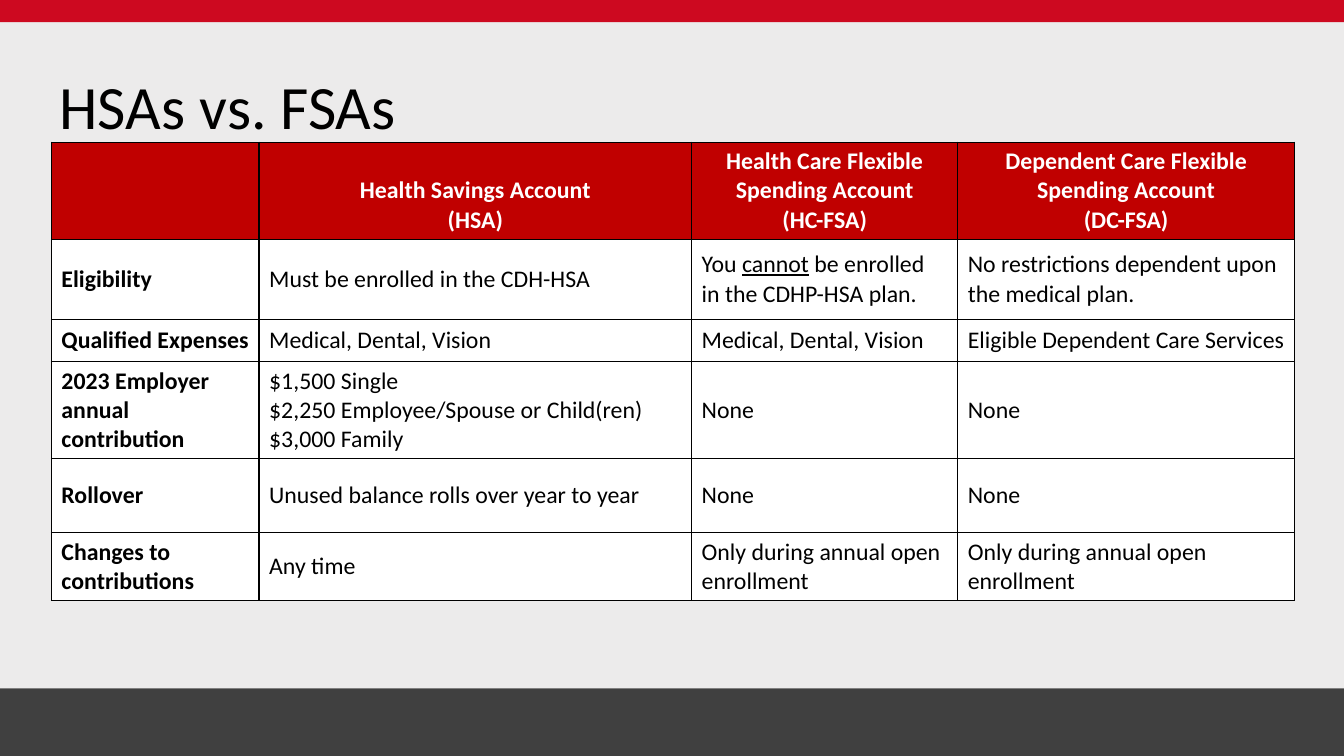
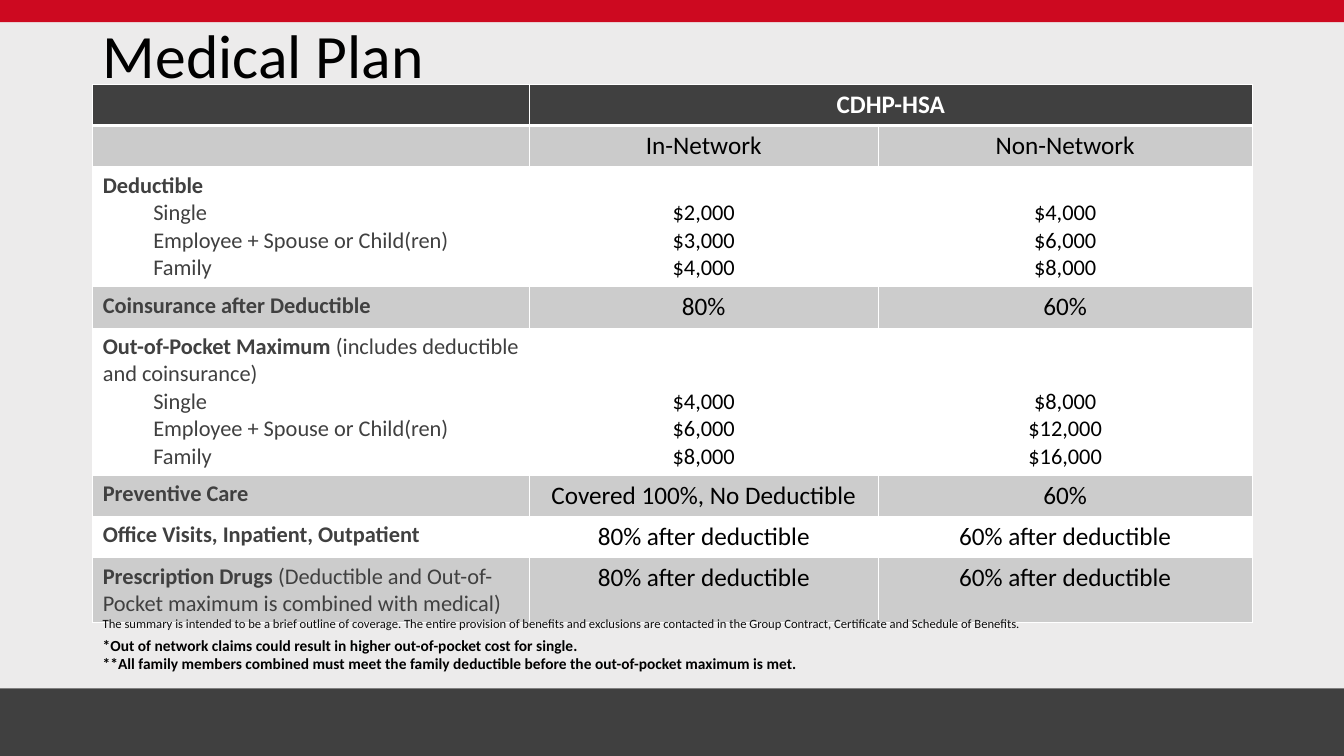
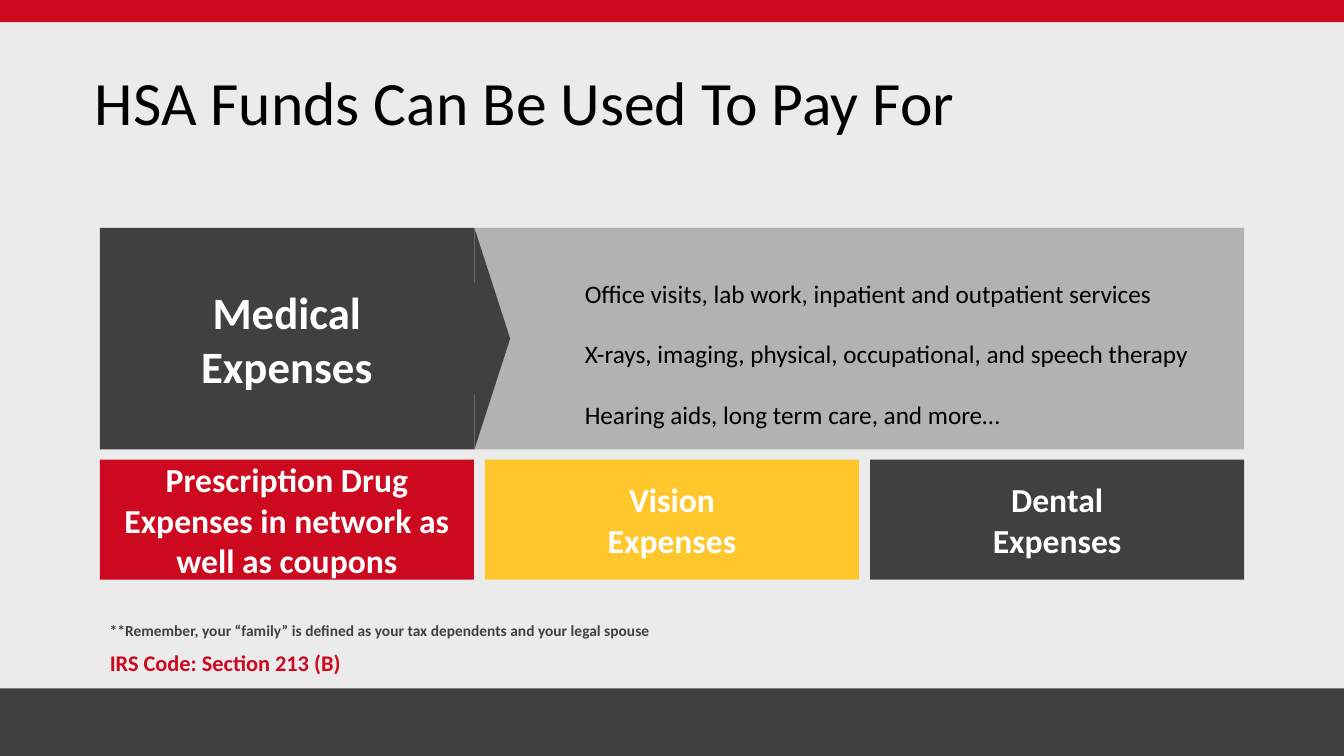
from dataclasses import dataclass
from typing import NamedTuple

from lxml import etree
from pptx import Presentation
from pptx.dml.color import RGBColor
from pptx.enum.shapes import MSO_SHAPE
from pptx.enum.text import MSO_ANCHOR, MSO_AUTO_SIZE, PP_ALIGN
from pptx.oxml import parse_xml
from pptx.oxml.ns import nsdecls, qn
from pptx.util import Inches, Pt

RECTANGLE, RIGHT_ARROW = MSO_SHAPE.RECTANGLE, MSO_SHAPE.RIGHT_ARROW
TOP, MIDDLE, BOTTOM = MSO_ANCHOR.TOP, MSO_ANCHOR.MIDDLE, MSO_ANCHOR.BOTTOM
LEFT, CENTER = PP_ALIGN.LEFT, PP_ALIGN.CENTER
NO_FIT = MSO_AUTO_SIZE.NONE
TITLE_ONLY = 5


@dataclass(frozen=True)
class Theme:
    """Colours, font and type sizes of the deck."""

    font: str = "Calibri"
    black: str = "000000"
    ink: str = "0D0D0D"
    white: str = "FFFFFF"
    dark: str = "404040"
    red: str = "CD0920"
    header_red: str = "C00000"
    yellow: str = "FFC72C"
    page: str = "D0CECE"
    subheader: str = "CBCBCB"
    stripe: str = "CCCCCC"
    title: float = 44
    hero: float = 32
    card: float = 24
    body: float = 18
    comparison: float = 17
    label: float = 16
    note: float = 11
    fine: float = 9


class Box(NamedTuple):
    """A rectangle in inches."""

    left: float
    top: float
    width: float
    height: float

    def lengths(self):
        """Return the four sides as slide lengths."""
        return [Inches(side) for side in self]


THEME = Theme()
SLIDE = Box(0, 0, 13.33, 7.5)
BANDS = (
    (Box(0, 0, 13.33, 6.83), THEME.page, 40),
    (Box(0, 6.83, 13.33, 0.67), THEME.dark, 100),
    (Box(0, 0, 13.33, 0.22), THEME.red, 100),
)
TIERS = ("Single", "Employee + Spouse or Child(ren)", "Family")

ACCOUNT_COLUMNS = (2.06, 4.29, 2.64, 3.34)
ACCOUNT_ROWS = (0.96, 0.79, 0.42, 0.96, 0.73, 0.67)
ACCOUNT_HEADERS = (
    (),
    ("Health Savings Account", "(HSA)"),
    ("Health Care Flexible Spending Account", "(HC-FSA)"),
    ("Dependent Care Flexible Spending Account", "(DC-FSA)"),
)
ACCOUNTS = (
    (
        ("Eligibility",),
        ("Must be enrolled in the CDH-HSA",),
        (("You ", ("cannot", {"underline": True}), " be enrolled in the CDHP-HSA plan."),),
        ("No restrictions dependent upon the medical plan.",),
    ),
    (
        ("Qualified Expenses",),
        ("Medical, Dental, Vision",),
        ("Medical, Dental, Vision",),
        ("Eligible Dependent Care Services",),
    ),
    (
        ("2023 Employer annual contribution",),
        ("$1,500 Single", "$2,250 Employee/Spouse or Child(ren)", "$3,000 Family"),
        ("None",),
        ("None",),
    ),
    (
        ("Rollover",),
        ("Unused balance rolls over year to year",),
        ("None",),
        ("None",),
    ),
    (
        ("Changes to contributions",),
        ("Any time",),
        ("Only during annual open enrollment",),
        ("Only during annual open enrollment",),
    ),
)

PLAN_COLUMNS = (4.33, 3.46, 3.71)
PLAN_ROWS = (0.4, 0.41, 1.19, 0.41, 1.46, 0.41, 0.41, 0.64)
PLAN = (
    ("Deductible", "", ("$2,000", "$3,000", "$4,000"), ("$4,000", "$6,000", "$8,000")),
    ("Coinsurance after Deductible", "", ("80%",), ("60%",)),
    (
        "Out-of-Pocket Maximum",
        " (includes deductible and coinsurance)",
        ("$4,000", "$6,000", "$8,000"),
        ("$8,000", "$12,000", "$16,000"),
    ),
    ("Preventive Care", "", ("Covered 100%, No Deductible",), ("60%",)),
    (
        "Office Visits, Inpatient, Outpatient",
        "",
        ("80% after deductible",),
        ("60% after deductible",),
    ),
    (
        "Prescription Drugs",
        " (Deductible and Out-of-Pocket maximum is combined with medical)",
        ("80% after deductible",),
        ("60% after deductible",),
    ),
)

CARDS = (
    (("Prescription Drug Expenses in network as well as coupons",), THEME.red),
    (("Vision", "Expenses"), THEME.yellow),
    (("Dental", "Expenses"), THEME.dark),
)
SERVICES = (
    "Office visits, lab work, inpatient and outpatient services",
    "X-rays, imaging, physical, occupational, and speech therapy",
    "Hearing aids, long term care, and more…",
)


def look(size, color=THEME.black, bold=False):
    """Return the format values of a text style."""
    return {"name": THEME.font, "size": Pt(size), "bold": bold, "color": color}


def set_font(font, formats):
    """Apply format values to a font."""
    for name, value in formats.items():
        if name == "color":
            font.color.rgb = RGBColor.from_string(value)
        else:
            setattr(font, name, value)


def write_text(frame, lines, formats, align=LEFT, indent=0, spacing=None):
    """Append one paragraph per line, each a string or a row of spans."""
    for line in lines:
        para = frame.add_paragraph() if frame.text else frame.paragraphs[0]
        para.alignment = align
        if indent:
            para.level = 1
            properties = para._p.get_or_add_pPr()
            properties.set("marL", str(Inches(indent)))
            properties.set("indent", "0")
        if spacing:
            para.line_spacing = spacing
        for part in (line,) if isinstance(line, str) else line:
            text, changes = (part, {}) if isinstance(part, str) else part
            span = para.add_run()
            span.text = text
            set_font(span.font, {**formats, **changes})


def add_block(slide, box, fill, opacity=100, kind=RECTANGLE):
    """Add a flat shape without outline."""
    block = slide.shapes.add_shape(kind, *box.lengths())
    block.shadow.inherit = False
    block.fill.solid()
    block.fill.fore_color.rgb = RGBColor.from_string(fill)
    block.line.fill.background()
    if opacity < 100:
        color = block.element.spPr.find(".//" + qn("a:srgbClr"))
        etree.SubElement(color, qn("a:alpha"), val=str(opacity * 1000))
    return block


def add_panel(slide, box, fill, lines, size):
    """Add a filled block with centred bold white text."""
    panel = add_block(slide, box, fill)
    frame = panel.text_frame
    frame.word_wrap = True
    frame.vertical_anchor = MIDDLE
    write_text(frame, lines, look(size, THEME.white, True), CENTER)


def add_note(slide, box, lines, formats):
    """Add a wrapped text box."""
    note = slide.shapes.add_textbox(*box.lengths())
    note.text_frame.word_wrap = True
    write_text(note.text_frame, lines, formats)


def add_page(deck, title, box):
    """Add a slide with its title placed in the box."""
    slide = deck.slides.add_slide(deck.slide_layouts[TITLE_ONLY])
    heading = slide.shapes.title
    heading.left, heading.top, heading.width, heading.height = box.lengths()
    frame = heading.text_frame
    frame.word_wrap = True
    frame.auto_size = NO_FIT
    frame.vertical_anchor = MIDDLE
    write_text(frame, [title], look(THEME.title), spacing=0.9)
    return slide


def add_bands(slide):
    """Place the shared bands on the layout of the slide."""
    anchor = slide.slide_layout.placeholders[0].element
    for box, fill, opacity in BANDS:
        anchor.addprevious(add_block(slide, box, fill, opacity).element)


def add_grid(slide, box, columns, rows):
    """Add an unbanded table with the given column widths and row heights."""
    frame = slide.shapes.add_table(len(rows), len(columns), *box.lengths())
    table = frame.table
    table.horz_banding = False
    for column, width in zip(table.columns, columns):
        column.width = Inches(width)
    for row, height in zip(table.rows, rows):
        row.height = Inches(height)
    return table


def style_cell(cell, fill, border, anchor=TOP, top=1, bottom=1):
    """Fill a cell and draw its four borders."""
    cell.fill.solid()
    cell.fill.fore_color.rgb = RGBColor.from_string(fill)
    cell.vertical_anchor = anchor
    widths = {"lnL": 1, "lnR": 1, "lnT": top, "lnB": bottom}
    for index, (side, width) in enumerate(widths.items()):
        line = parse_xml(
            f'<a:{side} {nsdecls("a")} w="{Pt(width)}"><a:solidFill>'
            f'<a:srgbClr val="{border}"/></a:solidFill></a:{side}>'
        )
        cell._tc.get_or_add_tcPr().insert(index, line)


def add_account_table(slide, box):
    """Add the comparison of savings and spending accounts."""
    table = add_grid(slide, box, ACCOUNT_COLUMNS, ACCOUNT_ROWS)
    header = look(THEME.comparison, THEME.white, True)
    for column, lines in enumerate(ACCOUNT_HEADERS):
        cell = table.cell(0, column)
        style_cell(cell, THEME.header_red, THEME.black, BOTTOM)
        write_text(cell.text_frame, lines, header, CENTER)
    for row, entries in enumerate(ACCOUNTS, 1):
        for column, lines in enumerate(entries):
            cell = table.cell(row, column)
            style_cell(cell, THEME.white, THEME.black, MIDDLE)
            write_text(cell.text_frame, lines, look(THEME.comparison, bold=column == 0))


def add_plan_table(slide, box):
    """Add the table of medical plan benefits."""
    table = add_grid(slide, box, PLAN_COLUMNS, PLAN_ROWS)
    table.cell(0, 1).merge(table.cell(0, 2))
    for column, network in enumerate(("", "In-Network", "Non-Network")):
        style_cell(table.cell(0, column), THEME.dark, THEME.white, bottom=3)
        cell = table.cell(1, column)
        style_cell(cell, THEME.subheader, THEME.white, top=3)
        if network:
            write_text(cell.text_frame, [network], look(THEME.body), CENTER)
    header = look(THEME.body, THEME.white, True)
    write_text(table.cell(0, 1).text_frame, ["CDHP-HSA"], header, CENTER)

    plain = look(THEME.label, THEME.dark)
    for row, (name, remark, *amounts) in enumerate(PLAN, 2):
        fill = THEME.stripe if row % 2 else THEME.white
        tiered = len(amounts[0]) > 1
        label = table.cell(row, 0)
        style_cell(label, fill, THEME.white)
        spans = [(name, {"bold": True})] + ([remark] if remark else [])
        write_text(label.text_frame, [spans], plain)
        if tiered:
            write_text(label.text_frame, TIERS, plain, indent=0.5)
        for column, lines in enumerate(amounts, 1):
            cell = table.cell(row, column)
            style_cell(cell, fill, THEME.white, BOTTOM if tiered else TOP)
            size = THEME.label if tiered else THEME.body
            write_text(cell.text_frame, lines, look(size), CENTER)


def add_medical_banner(slide, box, label_width):
    """Add the medical expenses label pointing to its services."""
    label = box._replace(width=label_width)
    edge = box.left + label_width
    services = box._replace(left=edge, width=box.width - label_width)
    details = add_block(slide, services, THEME.dark, 33)
    frame = details.text_frame
    frame.word_wrap = True
    frame.margin_left = Inches(1.1)
    frame.vertical_anchor = MIDDLE
    write_text(frame, SERVICES, look(THEME.body), spacing=2.0)
    pointer = box._replace(left=edge - 0.42, width=0.78)
    arrow = add_block(slide, pointer, THEME.dark, kind=RIGHT_ARROW)
    arrow.adjustments[0], arrow.adjustments[1] = 0.5, 0.455
    add_panel(slide, label, THEME.dark, ("Medical", "Expenses"), THEME.hero)


def add_expense_cards(slide, box, width):
    """Spread the expense cards evenly over the box."""
    step = (box.width - width) / (len(CARDS) - 1)
    for index, (lines, fill) in enumerate(CARDS):
        card = box._replace(left=box.left + index * step, width=width)
        add_panel(slide, card, fill, lines, THEME.card)


def build_accounts(deck):
    """Build the account comparison slide and the shared bands."""
    slide = add_page(deck, "HSAs vs. FSAs", Box(0.49, 0.45, 11.5, 1.27))
    add_bands(slide)
    add_account_table(slide, Box(0.51, 1.41, 12.33, 4.53))


def build_plan(deck):
    """Build the medical plan slide."""
    slide = add_page(deck, "Medical Plan", Box(0.92, -0.05, 11.5, 1.27))
    add_plan_table(slide, Box(0.92, 0.84, 11.5, 5.33))
    summary = (
        "The summary is intended to be a brief outline of coverage. "
        "The entire provision of benefits and exclusions are contacted in the "
        "Group Contract, Certificate and Schedule of Benefits."
    )
    add_note(slide, Box(0.92, 6.06, 11.5, 0.25), [summary], look(THEME.fine, THEME.ink))
    warnings = (
        "*Out of network claims could result in higher out-of-pocket cost for single.",
        "**All family members combined must meet the family deductible "
        "before the out-of-pocket maximum is met.",
    )
    add_note(slide, Box(0.92, 6.26, 10.55, 0.47), warnings, look(THEME.note, bold=True))


def build_expenses(deck):
    """Build the slide of eligible expenses."""
    slide = add_page(deck, "HSA Funds Can Be Used To Pay For", Box(0.84, 0.41, 11.5, 1.27))
    add_medical_banner(slide, Box(0.99, 2.26, 11.35, 2.2), 3.71)
    add_expense_cards(slide, Box(0.99, 4.56, 11.35, 1.19), 3.71)
    family = (
        "**Remember, your “family” is defined as your tax dependents and your legal spouse"
    )
    add_note(
        slide, Box(0.99, 6.11, 11.73, 0.29), [family], look(THEME.note, THEME.dark, True)
    )
    add_note(
        slide,
        Box(0.99, 6.39, 6.71, 0.37),
        ["IRS Code: Section 213 (B)"],
        look(THEME.label, THEME.red, True),
    )


def main():
    """Build and save the deck."""
    deck = Presentation()
    deck.slide_width, deck.slide_height = Inches(SLIDE.width), Inches(SLIDE.height)
    for build in (build_accounts, build_plan, build_expenses):
        build(deck)
    deck.save("out.pptx")


if __name__ == "__main__":
    main()
